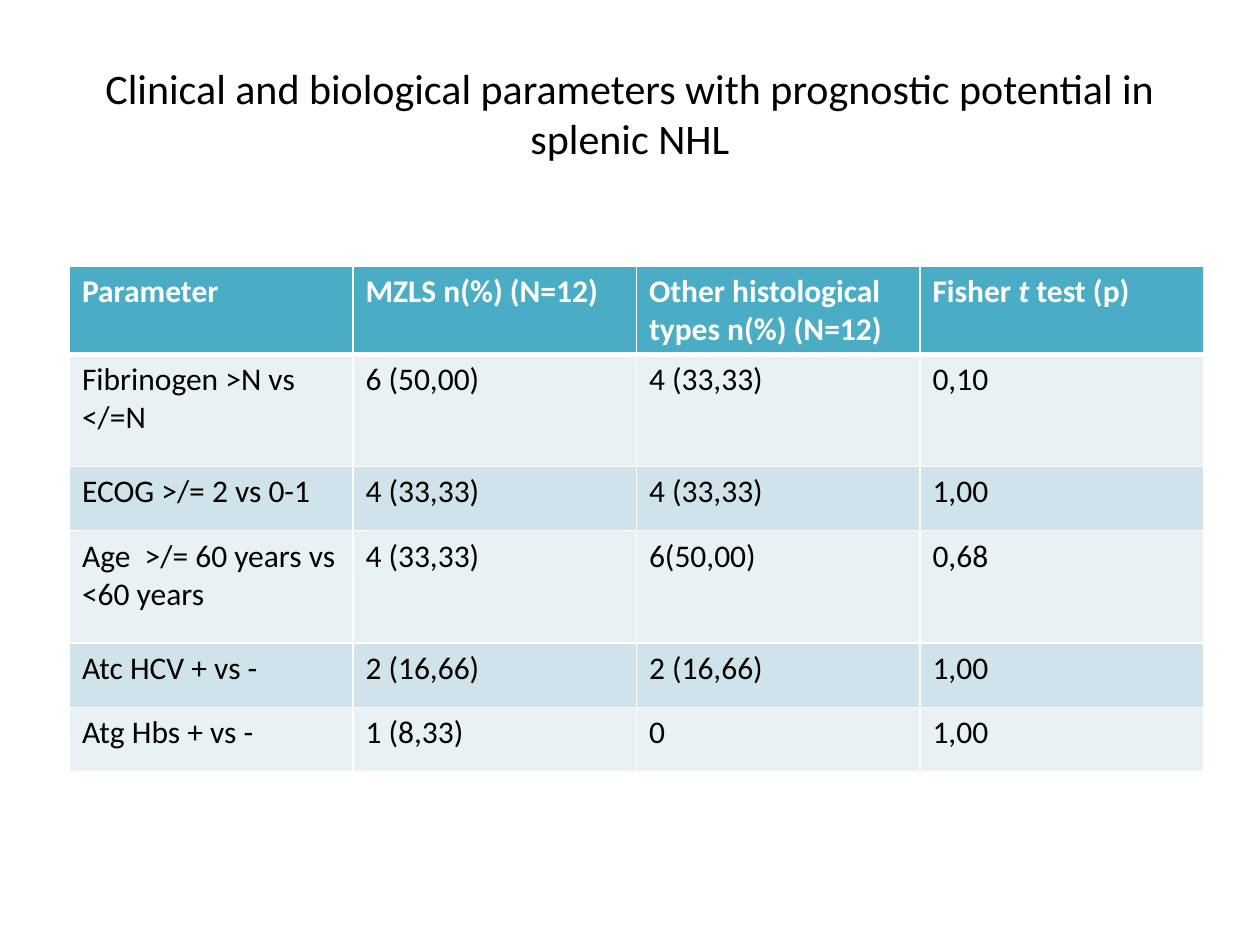
from dataclasses import dataclass

from lxml.etree import SubElement
from pptx import Presentation
from pptx.dml.color import RGBColor
from pptx.enum.text import MSO_ANCHOR, PP_ALIGN
from pptx.oxml.ns import qn
from pptx.util import Cm, Pt


@dataclass(frozen=True)
class Theme:
    font: str = "Calibri"
    title_size: int = 24
    table_size: int = 18
    text: str = "000000"
    header_text: str = "FFFFFF"
    header_fill: str = "4BACC6"
    bands: tuple = ("E9F1F5", "D0E3EA")
    border: str = "FFFFFF"
    thin: int = 1
    thick: int = 3


TITLE = ("Clinical and biological parameters with prognostic potential "
         "in splenic NHL")
# A cell is a list of (text, italic) runs or a plain string.
ROWS = [
    ["Parameter", "MZLS n(%) (N=12)", "Other histological types n(%) (N=12)",
     [("Fisher", False), (" t ", True), ("test (p)", False)]],
    ["Fibrinogen >N vs </=N", "6 (50,00)", "4 (33,33)", "0,10"],
    ["ECOG >/= 2 vs 0-1", "4 (33,33)", "4 (33,33)", "1,00"],
    ["Age  >/= 60 years vs <60 years", "4 (33,33)", "6(50,00)", "0,68"],
    ["Atc HCV + vs -", "2 (16,66)", "2 (16,66)", "1,00"],
    ["Atg Hbs + vs -", "1 (8,33)", "0", "1,00"],
]
ROW_HEIGHTS = [1.78, 2.26, 1.3, 2.26, 1.3, 1.3]


class SlideBuilder:
    def __init__(self, s, theme):
        self.s = s
        self.theme = theme

    def style(self, p, size, color, bold=False):
        font = p.font
        font.name = self.theme.font
        font.size = Pt(size)
        font.bold = bold
        font.color.rgb = RGBColor.from_string(color)

    def title(self, text, left, top, width, height):
        tf = self.s.shapes.add_textbox(
            Cm(left), Cm(top), Cm(width), Cm(height)).text_frame
        tf.word_wrap = True
        tf.vertical_anchor = MSO_ANCHOR.MIDDLE
        p = tf.paragraphs[0]
        p.text = text
        p.alignment = PP_ALIGN.CENTER
        self.style(p, self.theme.title_size, self.theme.text)

    def borders(self, cell, top, bottom):
        """Draw all four cell edges; call before the cell is filled."""
        tc_pr = cell._tc.get_or_add_tcPr()
        thin = self.theme.thin
        for side, width in zip("LRTB", (thin, thin, top, bottom)):
            ln = SubElement(tc_pr, qn(f"a:ln{side}"), w=str(Pt(width)))
            fill = SubElement(ln, qn("a:solidFill"))
            SubElement(fill, qn("a:srgbClr"), val=self.theme.border)

    def cell(self, cell, content, row):
        t = self.theme
        header = row == 0
        self.borders(cell, top=t.thick if row == 1 else t.thin,
                     bottom=t.thick if header else t.thin)
        color = t.header_fill if header else t.bands[(row - 1) % 2]
        cell.fill.solid()
        cell.fill.fore_color.rgb = RGBColor.from_string(color)

        p = cell.text_frame.paragraphs[0]
        runs = [(content, False)] if isinstance(content, str) else content
        for text, italic in runs:
            r = p.add_run()
            r.text = text
            if italic:
                r.font.italic = True
        self.style(p, t.table_size, t.header_text if header else t.text, header)

    def table(self, rows, heights, left, top, width):
        table = self.s.shapes.add_table(
            len(rows), len(rows[0]), Cm(left), Cm(top), Cm(width),
            Cm(sum(heights))).table
        for i, (row, height) in enumerate(zip(rows, heights)):
            table.rows[i].height = Cm(height)
            for j, content in enumerate(row):
                self.cell(table.cell(i, j), content, i)


def main():
    prs = Presentation()
    prs.slide_width, prs.slide_height = Cm(25.4), Cm(19.05)
    s = prs.slides.add_slide(prs.slide_layouts[6])
    builder = SlideBuilder(s, Theme())
    builder.title(TITLE, 1.27, 0.58, 22.86, 3.38)
    builder.table(ROWS, ROW_HEIGHTS, 1.4, 5.36, 22.86)
    prs.save("out.pptx")


if __name__ == "__main__":
    main()
